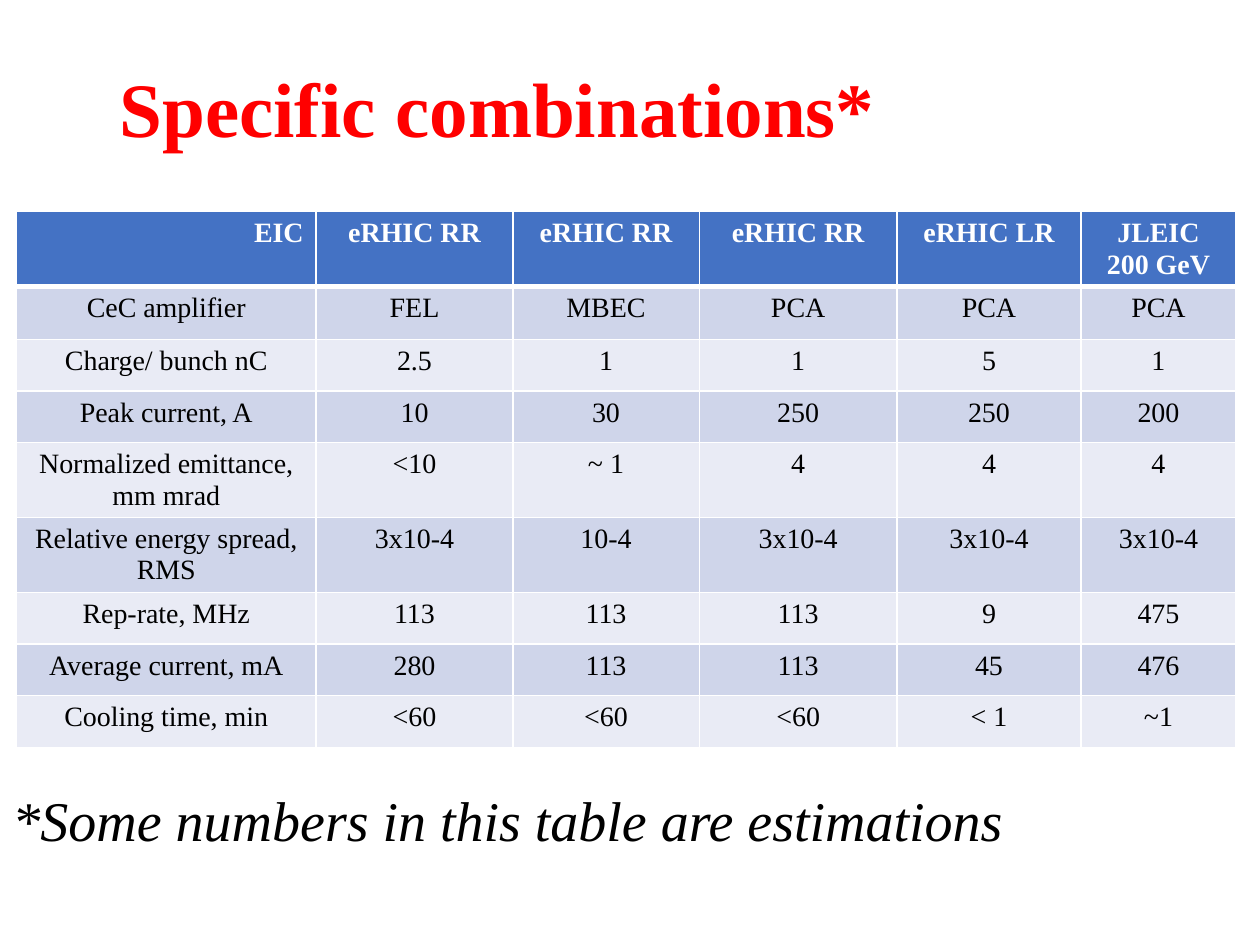
import lxml.etree
import pptx
import pptx.dml.color
import pptx.enum.text
import pptx.oxml.ns
import pptx.util

TITLE = "Specific combinations*"
FOOTNOTE = "*Some numbers in this table are estimations"
ROWS = [
    ("EIC", "eRHIC RR", "eRHIC RR", "eRHIC RR", "eRHIC LR", "JLEIC\n200 GeV"),
    ("CeC amplifier", "FEL", "MBEC", "PCA", "PCA", "PCA"),
    ("Charge/ bunch nC", "2.5", "1", "1", "5", "1"),
    ("Peak current, A", "10", "30", "250", "250", "200"),
    ("Normalized emittance, mm mrad", "<10", "~ 1", "4", "4", "4"),
    ("Relative energy spread, RMS", "3x10-4", "10-4", "3x10-4", "3x10-4", "3x10-4"),
    ("Rep-rate, MHz", "113", "113", "113", "9", "475"),
    ("Average current, mA", "280", "113", "113", "45", "476"),
    ("Cooling time, min", "<60", "<60", "<60", "< 1", "~1"),
]
COLUMN_WIDTHS = [2.38, 1.56, 1.48, 1.57, 1.46, 1.23]
HEADER_HEIGHT, FIRST_HEIGHT, ROW_HEIGHT = 0.59, 0.42, 0.41
COLORS = {
    "title": "FF0000",
    "text": "000000",
    "white": "FFFFFF",
    "header": "4472C4",
    "odd": "CFD5EA",
    "even": "E9EBF5",
}
FONT = "Times New Roman"
ALIGN = pptx.enum.text.PP_ALIGN
MIDDLE = pptx.enum.text.MSO_ANCHOR.MIDDLE
inches = pptx.util.Inches


def color(name):
    return pptx.dml.color.RGBColor.from_string(COLORS[name])


def write(frame, text, size=16, ink="text", bold=False, italic=False,
          align=ALIGN.LEFT, spacing=None, anchor=None):
    frame.word_wrap = True
    if anchor is not None:
        frame.vertical_anchor = anchor
        frame.auto_size = pptx.enum.text.MSO_AUTO_SIZE.NONE
    for index, line in enumerate(text.split("\n")):
        para = frame.add_paragraph() if index else frame.paragraphs[0]
        para.alignment = align
        if spacing:
            para.line_spacing = spacing
        span = para.add_run()
        span.text = line
        span.font.name = FONT
        span.font.size = pptx.util.Pt(size)
        span.font.bold = bold
        span.font.italic = italic
        span.font.color.rgb = color(ink)


def set_borders(cell, widths):
    properties = cell._tc.get_or_add_tcPr()
    for side, width in widths.items():
        line = lxml.etree.SubElement(
            properties, pptx.oxml.ns.qn(f"a:ln{side}"), w=str(pptx.util.Pt(width)))
        fill = lxml.etree.SubElement(line, pptx.oxml.ns.qn("a:solidFill"))
        lxml.etree.SubElement(fill, pptx.oxml.ns.qn("a:srgbClr"), val=COLORS["white"])


def add_parameters(slide):
    heights = [HEADER_HEIGHT, FIRST_HEIGHT] + [ROW_HEIGHT] * (len(ROWS) - 2)
    table = slide.shapes.add_table(
        len(ROWS), len(COLUMN_WIDTHS), inches(0.13), inches(1.68),
        inches(sum(COLUMN_WIDTHS)), inches(sum(heights))).table
    for column, width in zip(table.columns, COLUMN_WIDTHS):
        column.width = inches(width)
    for row_index, (values, height) in enumerate(zip(ROWS, heights)):
        table.rows[row_index].height = inches(height)
        header = row_index == 0
        band = "header" if header else "odd" if row_index % 2 else "even"
        borders = {"L": 1, "R": 1, "T": 3 if row_index == 1 else 1, "B": 3 if header else 1}
        for column_index, value in enumerate(values):
            cell = table.cell(row_index, column_index)
            corner = header and column_index == 0
            write(cell.text_frame, value, bold=header,
                  ink="white" if header else "text",
                  align=ALIGN.RIGHT if corner else ALIGN.CENTER)
            set_borders(cell, borders)
            cell.fill.solid()
            cell.fill.fore_color.rgb = color(band)


def main():
    deck = pptx.Presentation()
    deck.slide_width, deck.slide_height = inches(10), inches(7.5)
    slide = deck.slides.add_slide(deck.slide_layouts[5])
    title = slide.shapes.title
    title.left, title.top = inches(0.85), inches(0.17)
    title.width, title.height = inches(8.62), inches(1.45)
    write(title.text_frame, TITLE, size=44, ink="title", bold=True,
          spacing=0.9, anchor=MIDDLE)
    add_parameters(slide)
    box = slide.shapes.add_textbox(0, inches(6.17), inches(8.62), inches(0.73))
    write(box.text_frame, FOOTNOTE, size=32, italic=True, spacing=0.9, anchor=MIDDLE)
    deck.save("out.pptx")


if __name__ == "__main__":
    main()
